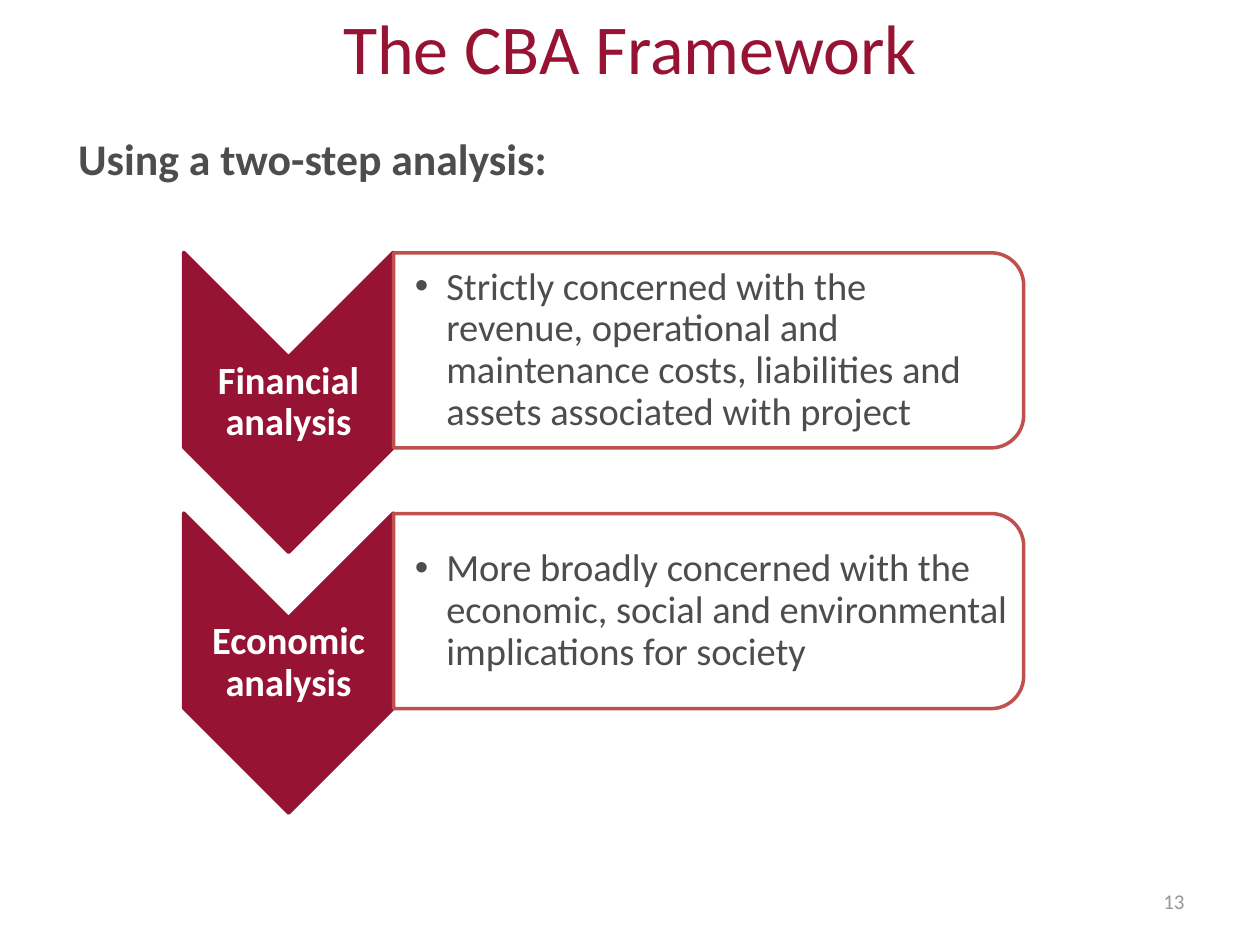
from lxml import etree
from pptx import Presentation
from pptx.dml.color import RGBColor
from pptx.enum.shapes import MSO_SHAPE as Shape
from pptx.enum.text import MSO_ANCHOR as Anchor, MSO_AUTO_SIZE as AutoSize, PP_ALIGN as Align
from pptx.oxml.ns import qn
from pptx.util import Pt

COLORS = {
    "crimson": "961334",
    "outline": "C0504D",
    "text": "4D4D4F",
    "number": "979797",
    "white": "FFFFFF",
}
STEPS = [
    ("Financial analysis",
     "Strictly concerned with the revenue, operational and maintenance costs, "
     "liabilities and assets associated with project"),
    ("Economic analysis",
     "More broadly concerned with the economic, social and environmental "
     "implications for society"),
]
STEP_PITCH = 149


def write(shape, text, size, color, align, anchor, bold=False, bullet=None, indent=0):
    frame = shape.text_frame
    frame.word_wrap = True
    frame.auto_size = AutoSize.NONE
    frame.vertical_anchor = anchor
    paragraph = frame.paragraphs[0]
    properties = paragraph._p.get_or_add_pPr()
    properties.set("marL", str(Pt(indent)))
    properties.set("indent", str(-Pt(indent)))
    if bullet:
        etree.SubElement(properties, qn("a:buFont")).set("typeface", "Arial")
        etree.SubElement(properties, qn("a:buChar")).set("char", bullet)
    else:
        etree.SubElement(properties, qn("a:buNone"))
    paragraph.alignment = align
    paragraph.space_before = Pt(0)
    run = paragraph.add_run()
    run.text = text
    run.font.name = "Calibri"
    run.font.size = Pt(size)
    run.font.bold = bold
    run.font.color.rgb = RGBColor.from_string(COLORS[color])
    return paragraph


def add_turned_shape(kind, left, top, width, height, fill, line):
    shape = slide.shapes.add_shape(kind, Pt(left), Pt(top), Pt(width), Pt(height))
    shape.rotation = 90
    shape.shadow.inherit = False
    shape.fill.solid()
    shape.fill.fore_color.rgb = RGBColor.from_string(COLORS[fill])
    shape.line.color.rgb = RGBColor.from_string(COLORS[line])
    shape.line.width = Pt(2)
    return shape


presentation = Presentation()
presentation.slide_width = Pt(720)
presentation.slide_height = Pt(540)
slide = presentation.slides.add_slide(presentation.slide_layouts[1])

title = slide.shapes.title
title.left, title.top, title.width, title.height = Pt(36), Pt(-18.5), Pt(648), Pt(90)
write(title, "The CBA Framework", 40, "crimson", Align.CENTER, Anchor.MIDDLE)

body = slide.placeholders[1]
body.left, body.top, body.width, body.height = Pt(37.5), Pt(71.5), Pt(648), Pt(356)
write(body, "Using a two-step analysis:", 25, "text", Align.JUSTIFY, Anchor.TOP, bold=True)

number = slide.shapes.add_textbox(Pt(516), Pt(500.5), Pt(168), Pt(28.75))
write(number, "13", 12, "number", Align.RIGHT, Anchor.MIDDLE)

for index, (name, description) in enumerate(STEPS):
    offset = index * STEP_PITCH
    add_turned_shape(Shape.CHEVRON, 79.2, 170 + offset, 171.4, 119.8, "crimson", "crimson")
    label = slide.shapes.add_textbox(Pt(105), Pt(204.5 + offset), Pt(119.8), Pt(51))
    label_paragraph = write(label, name, 22, "white", Align.CENTER, Anchor.MIDDLE, bold=True)

    panel = add_turned_shape(Shape.ROUND_2_SAME_RECTANGLE, 349.2, 20.2 + offset, 111.5, 360,
                             "white", "outline")
    panel_color = panel.fill._xPr.find(qn("a:solidFill")).find(qn("a:srgbClr"))
    etree.SubElement(panel_color, qn("a:alpha")).set("val", "90000")
    detail = slide.shapes.add_textbox(Pt(224.8), Pt(149.8 + offset), Pt(355), Pt(100.8))
    detail_paragraph = write(detail, description, 22, "text", Align.LEFT, Anchor.MIDDLE,
                             bullet="•", indent=18)

    for box, paragraph, inset in ((label, label_paragraph, 1.4), (detail, detail_paragraph, 12.3)):
        frame = box.text_frame
        frame.margin_left = Pt(inset)
        frame.margin_right = frame.margin_top = frame.margin_bottom = Pt(1.4)
        paragraph.line_spacing = 0.9

presentation.save("out.pptx")
